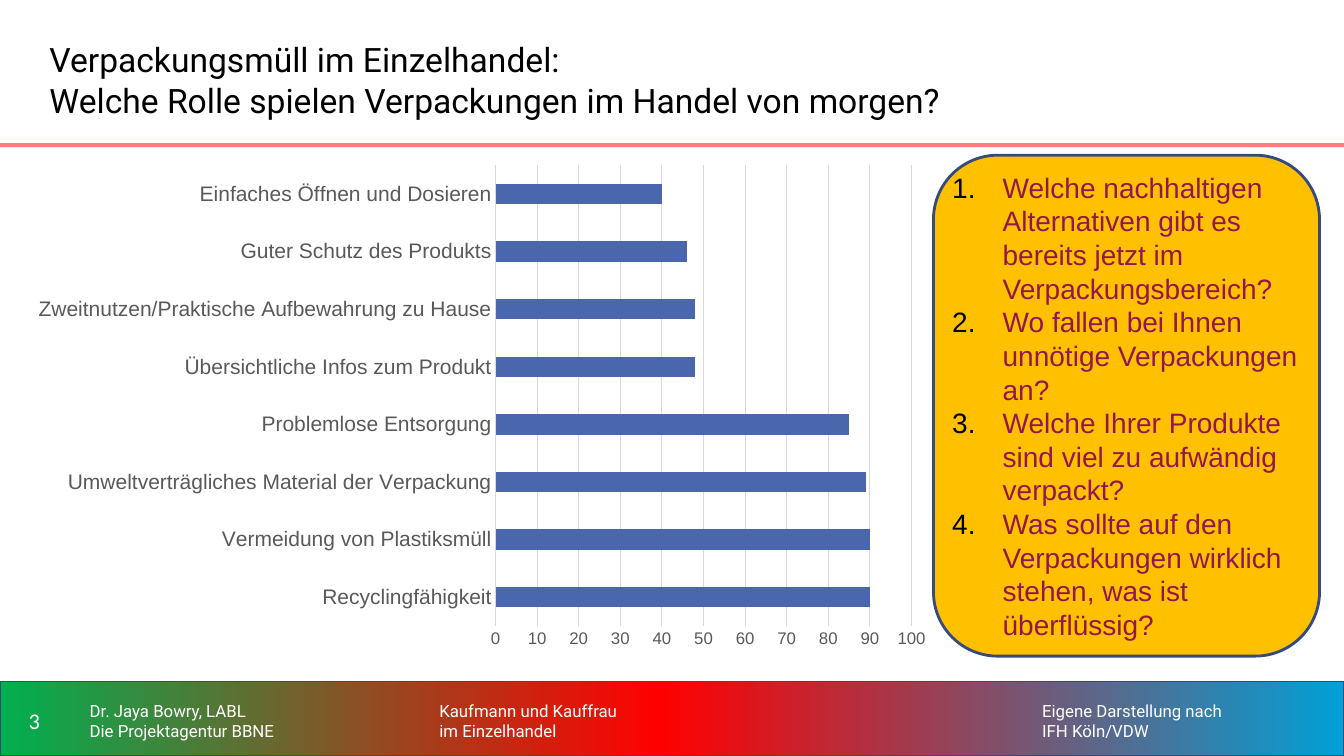
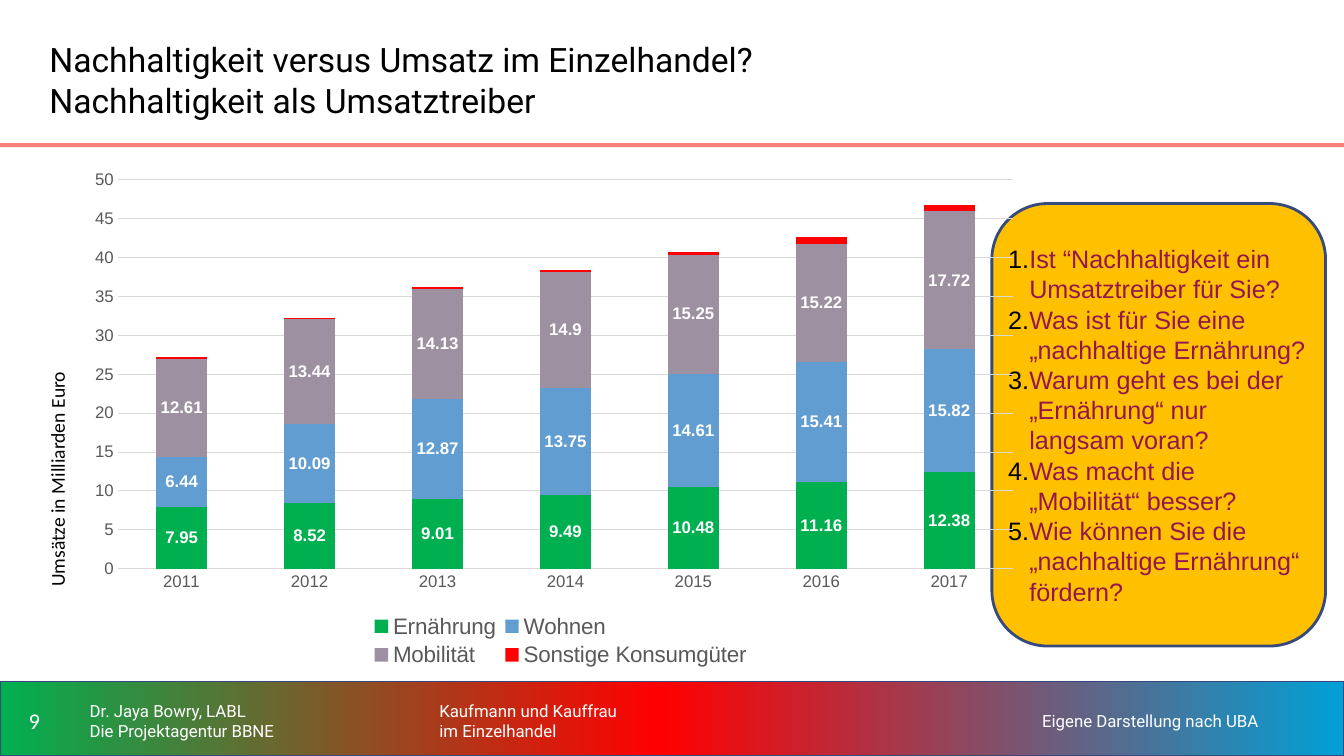
from copy import deepcopy
from dataclasses import dataclass

from pptx import Presentation
from pptx.chart.data import CategoryChartData
from pptx.dml.color import RGBColor
from pptx.enum.chart import XL_CHART_TYPE, XL_LABEL_POSITION, XL_LEGEND_POSITION, XL_TICK_MARK
from pptx.enum.shapes import MSO_SHAPE
from pptx.enum.text import MSO_ANCHOR, MSO_AUTO_SIZE, PP_ALIGN
from pptx.oxml import parse_xml
from pptx.oxml.ns import nsdecls
from pptx.util import Inches, Pt


@dataclass(frozen=True)
class Theme:
    black: str = "000000"
    white: str = "FFFFFF"
    grey: str = "595959"
    grid: str = "D9D9D9"
    outline: str = "364A7D"
    rule: str = "FF7E79"
    panel: str = "FFC000"
    question: str = "941651"
    bar: str = "4A66AC"
    green: str = "00B050"
    blue: str = "629DD1"
    mauve: str = "9D90A0"
    red: str = "FF0000"
    cyan: str = "01A0D6"
    heading: str = "Roboto"
    body: str = "Arial"
    label: str = "Calibri"
    title_size: int = 24
    number_size: int = 16
    footer_size: int = 12
    caption_size: int = 14
    legend_size: int = 16
    axis_size: int = 12
    category_size: int = 15


T = Theme()


def style(font, name, size, color, bold=False):
    font.name, font.size, font.bold = name, Pt(size), bold
    font.color.rgb = RGBColor.from_string(color)


def paint(shape, fill, line=None, width=1):
    shape.shadow.inherit = False
    if fill:
        shape.fill.solid()
        shape.fill.fore_color.rgb = RGBColor.from_string(fill)
    if line:
        shape.line.color.rgb = RGBColor.from_string(line)
        shape.line.width = Pt(width)
    else:
        shape.line.fill.background()


def place(parent, index, box, inner=False):
    for old in parent.xpath("./c:layout"):
        parent.remove(old)
    target = '<c:layoutTarget val="inner"/>' if inner else ""
    modes = "".join(f'<c:{k}Mode val="edge"/>' for k in "xy")
    sizes = "".join(f'<c:{k} val="{v}"/>' for k, v in zip("xywh", box))
    parent.insert(index, parse_xml(
        f'<c:layout {nsdecls("c")}><c:manualLayout>{target}{modes}{sizes}'
        "</c:manualLayout></c:layout>"))


class Deck:
    def __init__(self):
        self.prs = Presentation()
        self.prs.slide_width, self.prs.slide_height = Inches(13.33), Inches(7.5)
        self.s = None

    def at(self, x, y, w, h):
        col, row = self.prs.slide_width / 100, self.prs.slide_height / 100
        return round(x * col), round(y * row), round(w * col), round(h * row)

    def slide(self, title, number, source):
        first = self.s is None
        self.s = self.prs.slides.add_slide(self.prs.slide_layouts[5])
        if first:
            self.master_bands()
        self.title(title)
        self.text(number, (0, 91.2, 5.1, 8.13), T.label, T.number_size, T.white, PP_ALIGN.CENTER)
        footers = (
            (5.93, 20.85, "Dr. Jaya Bowry, LABL\nDie Projektagentur BBNE"),
            (31.95, 23.25, "Kaufmann und Kauffrau \vim Einzelhandel"),
            (76.8, 20.85, source),
        )
        for x, w, words in footers:
            self.text(words, (x, 91.2, w, 8.27), T.heading, T.footer_size, T.white)

    def master_bands(self):
        band = self.s.shapes.add_shape(MSO_SHAPE.RECTANGLE, *self.at(0, 90.13, 100, 9.87))
        paint(band, None, T.outline)
        band.fill.gradient()
        band.fill.gradient_angle = 0
        stops = band.element.xpath(".//a:gsLst")[0]
        stops.append(deepcopy(stops[0]))
        for stop, pos, color in zip(band.fill.gradient_stops, (0, 0.49, 1), (T.green, T.red, T.cyan)):
            stop.position = pos
            stop.color.rgb = RGBColor.from_string(color)
        rule = self.s.shapes.add_shape(MSO_SHAPE.RECTANGLE, *self.at(0, 18.93, 100, 0.53))
        paint(rule, T.rule)
        for i, shape in enumerate((band, rule)):
            shape.element.xpath(".//p:cNvPr")[0].set("id", str(101 + i))
            self.prs.slide_master.shapes.element.insert(2 + i, shape.element)

    def set_text(self, tf, words, name, size, color, align=PP_ALIGN.LEFT):
        tf.text = words
        tf.word_wrap = True
        tf.auto_size = MSO_AUTO_SIZE.NONE
        tf.vertical_anchor = MSO_ANCHOR.MIDDLE
        for p in tf.paragraphs:
            p.alignment = align
            for r in p.runs:
                style(r.font, name, size, color)

    def title(self, words):
        sp = self.s.shapes.title
        sp.left, sp.top, sp.width, sp.height = self.at(2.93, 2.67, 75.1, 15.73)
        self.set_text(sp.text_frame, words, T.heading, T.title_size, T.black)

    def text(self, words, box, name, size, color, align=PP_ALIGN.LEFT):
        sp = self.s.shapes.add_textbox(*self.at(*box))
        self.set_text(sp.text_frame, words, name, size, color, align)
        return sp

    def caption(self, words, box):
        sp = self.text(words, box, T.label, T.caption_size, T.black)
        sp.rotation = 270
        tf = sp.text_frame
        tf.vertical_anchor = MSO_ANCHOR.TOP
        tf.margin_top = tf.margin_bottom = Inches(0.1)

    def questions(self, items, box, size, indent):
        sp = self.s.shapes.add_shape(MSO_SHAPE.ROUNDED_RECTANGLE, *self.at(*box))
        paint(sp, T.panel, T.outline, 2)
        tf = sp.text_frame
        tf.margin_left = tf.margin_right = tf.margin_top = tf.margin_bottom = 0
        self.set_text(tf, "\n".join(items), T.body, size, T.question)
        for p in tf.paragraphs:
            pPr = p._p.get_or_add_pPr()
            pPr.set("marL", str(Inches(indent)))
            pPr.set("indent", str(-Inches(indent)))
            pPr.append(parse_xml(
                f'<a:buClr {nsdecls("a")}><a:srgbClr val="{T.black}"/></a:buClr>'))
            pPr.append(parse_xml(f'<a:buAutoNum {nsdecls("a")} type="arabicPeriod"/>'))

    def chart(self, kind, cats, series, box, plot_box, top, step, gap, cat_size=T.axis_size):
        data = CategoryChartData()
        data.categories = cats
        for name, values, color in series:
            data.add_series(name, values)
        chart = self.s.shapes.add_chart(kind, *self.at(*box), data).chart
        style(chart.font, T.body, 10, T.black)
        chart.has_title = chart.has_legend = False
        plot = chart.plots[0]
        plot.gap_width, plot.vary_by_categories = gap, False
        for ser, (name, values, color) in zip(plot.series, series):
            ser.format.fill.solid()
            ser.format.fill.fore_color.rgb = RGBColor.from_string(color)
        for axis, size in ((chart.category_axis, cat_size), (chart.value_axis, T.axis_size)):
            axis.major_tick_mark = axis.minor_tick_mark = XL_TICK_MARK.NONE
            style(axis.tick_labels.font, T.body, size, T.grey)
        values = chart.value_axis
        values.minimum_scale, values.maximum_scale, values.major_unit = 0, top, step
        values.has_major_gridlines = True
        values.format.line.fill.background()
        for line in (chart.category_axis.format.line, values.major_gridlines.format.line):
            line.color.rgb = RGBColor.from_string(T.grid)
            line.width = Pt(0.75)
        place(chart.element.xpath(".//c:plotArea")[0], 0, plot_box, inner=True)
        return chart

    def legend(self, chart, box):
        chart.has_legend = True
        chart.legend.position = XL_LEGEND_POSITION.BOTTOM
        chart.legend.include_in_layout = False
        style(chart.legend.font, T.body, T.legend_size, T.grey)
        place(chart.element.xpath(".//c:legend")[0], 1, box)

    def value_labels(self, series):
        for ser in series:
            labels = ser.data_labels
            labels.show_value = True
            labels.position = XL_LABEL_POSITION.CENTER
            style(labels.font, T.body, T.axis_size, T.white, True)


def packaging(deck):
    deck.slide(
        "Verpackungsmüll im Einzelhandel:\vWelche Rolle spielen Verpackungen im Handel von morgen?",
        "3", "Eigene Darstellung nach \vIFH Köln/VDW")
    deck.questions((
        "Welche nachhaltigen Alternativen gibt es bereits jetzt im Verpackungsbereich?",
        "Wo fallen bei Ihnen unnötige Verpackungen an?",
        "Welche Ihrer Produkte sind viel zu aufwändig verpackt?",
        "Was sollte auf den Verpackungen wirklich stehen, was ist überflüssig?",
    ), (69.45, 20.53, 28.73, 66.27), 20, 0.5)
    wishes = {
        "Recyclingfähigkeit": 90,
        "Vermeidung von Plastiksmüll": 90,
        "Umweltverträgliches Material der Verpackung": 89,
        "Problemlose Entsorgung": 85,
        "Übersichtliche Infos zum Produkt": 48,
        "Zweitnutzen/Praktische Aufbewahrung zu Hause": 48,
        "Guter Schutz des Produkts": 46,
        "Einfaches Öffnen und Dosieren": 40,
    }
    deck.chart(
        XL_CHART_TYPE.BAR_CLUSTERED, list(wishes), [("Series 1", list(wishes.values()), T.bar)],
        (1.8, 20.53, 68.78, 66.27), (0.51, 0.02, 0.45, 0.92), 100, 10, 182, T.category_size)


def turnover(deck):
    deck.slide(
        "Nachhaltigkeit versus Umsatz im Einzelhandel?\vNachhaltigkeit als Umsatztreiber",
        "9", "Eigene Darstellung nach UBA")
    deck.caption("Umsätze in Milliarden Euro", (-6.15, 57.47, 20.85, 5.87))
    deck.questions((
        "Ist “Nachhaltigkeit ein Umsatztreiber für Sie?",
        "Was ist für Sie eine „nachhaltige Ernährung?",
        "Warum geht es bei der „Ernährung“ nur langsam voran?",
        "Was macht die „Mobilität“ besser?",
        "Wie können Sie die „nachhaltige Ernährung“ fördern?",
    ), (73.8, 26.93, 24.83, 58.53), 18, 0.21)
    series = [
        ("Ernährung", (7.95, 8.52, 9.01, 9.49, 10.48, 11.16, 12.38), T.green),
        ("Wohnen", (6.44, 10.09, 12.87, 13.75, 14.61, 15.41, 15.82), T.blue),
        ("Mobilität", (12.61, 13.44, 14.13, 14.9, 15.25, 15.22, 17.72), T.mauve),
        ("Sonstige Konsumgüter", (0.2, 0.2, 0.2, 0.3, 0.4, 0.8, 0.8), T.red),
    ]
    chart = deck.chart(
        XL_CHART_TYPE.COLUMN_STACKED, [str(year) for year in range(2011, 2018)], series,
        (5.93, 21.07, 70.88, 67.73), (0.04, 0.04, 0.94, 0.76), 50, 5, 150)
    chart.plots[0].overlap = 100
    deck.value_labels(list(chart.plots[0].series)[:3])
    deck.legend(chart, (0.3, 0.88, 0.41, 0.12))


def main():
    deck = Deck()
    packaging(deck)
    turnover(deck)
    deck.prs.save("out.pptx")


if __name__ == "__main__":
    main()
